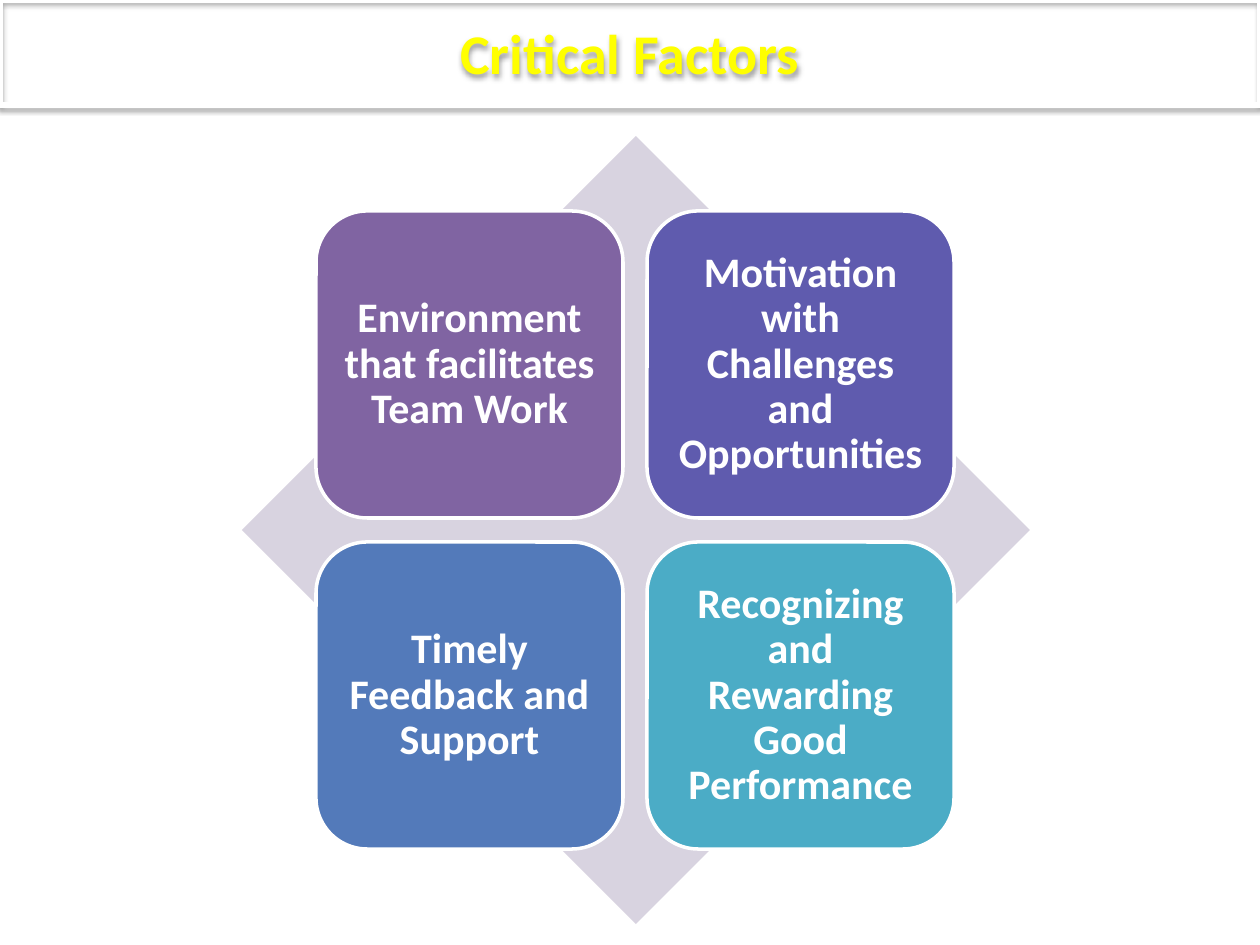
from lxml import etree
from pptx import Presentation
from pptx.dml.color import RGBColor
from pptx.enum.shapes import MSO_SHAPE as Shape
from pptx.enum.text import MSO_ANCHOR as Anchor, PP_ALIGN as Align
from pptx.oxml.ns import qn
from pptx.util import Pt

PX = 914400 / 126

WHITE = RGBColor(0xFF, 0xFF, 0xFF)
YELLOW = RGBColor(0xFF, 0xFF, 0x00)
LAVENDER = RGBColor(0xD8, 0xD3, 0xE0)
PURPLE = RGBColor(0x80, 0x64, 0xA2)
INDIGO = RGBColor(0x5F, 0x5B, 0xAE)
BLUE = RGBColor(0x53, 0x7A, 0xBA)
TEAL = RGBColor(0x4B, 0xAC, 0xC6)


def add_block(kind, left, top, width, height, fill=None, line_width=0):
    block = slide.shapes.add_shape(kind, *(round(v * PX) for v in (left, top, width, height)))
    block.shadow.inherit = False
    if fill is None:
        block.fill.background()
    else:
        block.fill.solid()
        block.fill.fore_color.rgb = fill
    if line_width:
        block.line.color.rgb = WHITE
        block.line.width = Pt(line_width)
    else:
        block.line.fill.background()
    return block


def write(block, words, size, color):
    block.text_frame.word_wrap = True
    block.text_frame.vertical_anchor = Anchor.MIDDLE
    paragraph = block.text_frame.paragraphs[0]
    paragraph.alignment = Align.CENTER
    run = paragraph.add_run()
    run.text = words
    for name, value in {"name": "Calibri", "size": Pt(size), "bold": True}.items():
        setattr(run.font, name, value)
    run.font.color.rgb = color
    return paragraph


prs = Presentation()
prs.slide_width, prs.slide_height = round(1260 * PX), round(945 * PX)
slide = prs.slides.add_slide(prs.slide_layouts[6])

# Title bar with a soft shadow below
title = add_block(Shape.RECTANGLE, 0, 0, 1260, 105, line_width=3)
write(title, "Critical Factors", 32, YELLOW)
effects = title._element.spPr.find(qn("a:effectLst"))
shadow = etree.SubElement(effects, qn("a:outerShdw"), blurRad=str(Pt(3.1)),
                          dist=str(Pt(1.6)), dir="5400000", rotWithShape="0")
shade = etree.SubElement(shadow, qn("a:srgbClr"), val="000000")
etree.SubElement(shade, qn("a:alpha"), val="38000")

# Diamond behind the factors
add_block(Shape.DIAMOND, 242, 136, 788, 788, LAVENDER)

# Four factors in a two by two grid
GRID_LEFT, GRID_TOP, TILE, PITCH = 316, 211, 307, 331
factors = [
    ("Environment that facilitates Team Work", PURPLE),
    ("Motivation with Challenges and Opportunities", INDIGO),
    ("Timely Feedback and Support", BLUE),
    ("Recognizing and Rewarding Good Performance", TEAL),
]
for index, (words, color) in enumerate(factors):
    row, column = divmod(index, 2)
    factor = add_block(Shape.ROUNDED_RECTANGLE, GRID_LEFT + column * PITCH,
                       GRID_TOP + row * PITCH, TILE, TILE, color, 2)
    for side in ("left", "top", "right", "bottom"):
        setattr(factor.text_frame, f"margin_{side}", round(13 * PX))
    write(factor, words, 24, WHITE).line_spacing = 0.9

prs.save("out.pptx")
